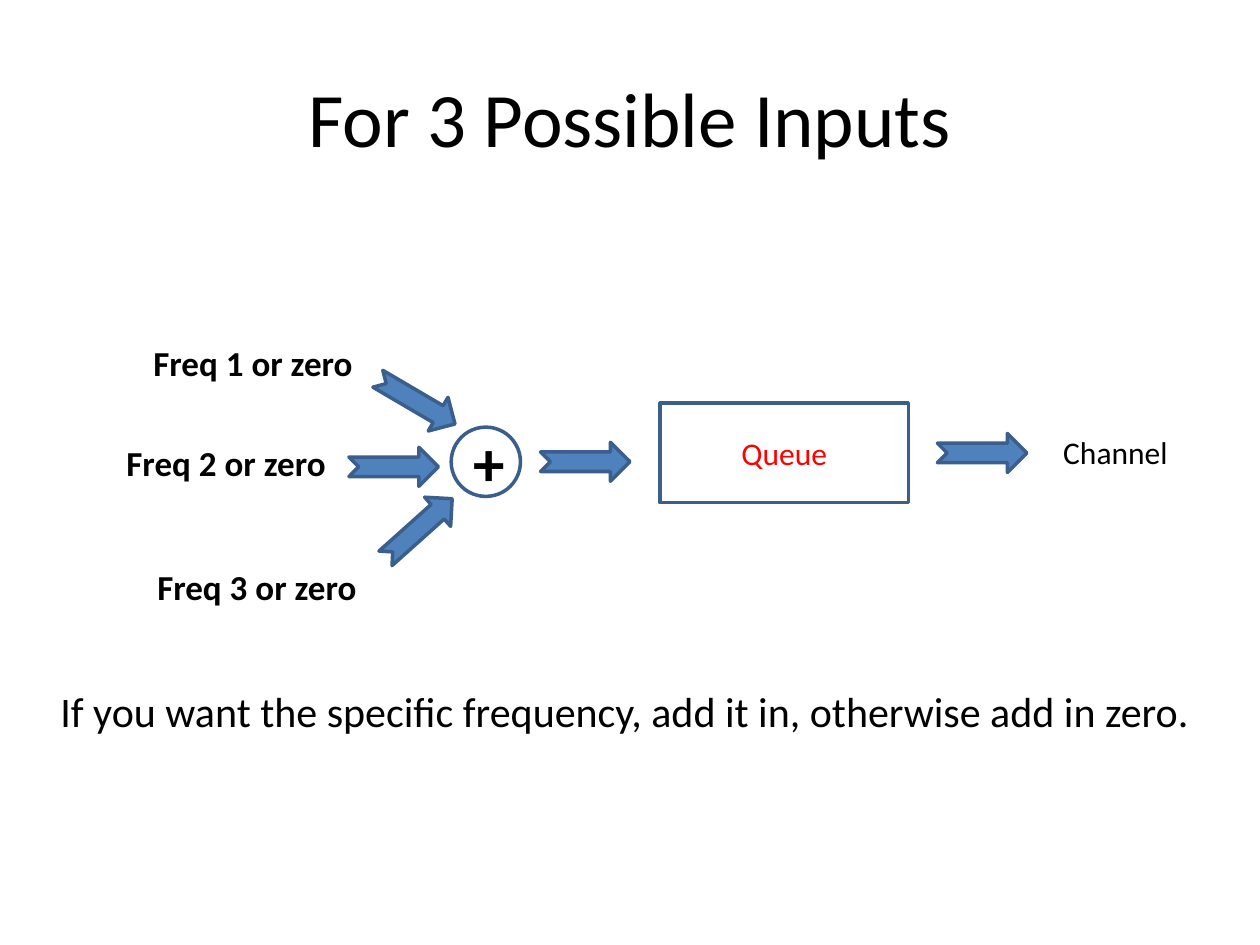
from pptx import Presentation
from pptx.dml.color import RGBColor
from pptx.enum.shapes import MSO_SHAPE as Kind
from pptx.enum.text import MSO_ANCHOR as Anchor, PP_ALIGN as Align
from pptx.util import Pt

BLACK = RGBColor(0x00, 0x00, 0x00)
RED = RGBColor(0xFF, 0x00, 0x00)
BLUE = RGBColor(0x4F, 0x81, 0xBD)
NAVY = RGBColor(0x3A, 0x5F, 0x8C)


def write(shape, text, size, color=BLACK, bold=False, center=False, wrap=False):
    frame = shape.text_frame
    frame.word_wrap = wrap
    frame.vertical_anchor = Anchor.MIDDLE if center else Anchor.TOP
    para = frame.paragraphs[0]
    para.alignment = Align.CENTER if center else Align.LEFT
    run = para.add_run()
    run.text = text
    look = {"name": "Calibri", "size": Pt(size), "bold": bold}
    for key, value in look.items():
        setattr(run.font, key, value)
    run.font.color.rgb = color


def draw(kind, x, y, w, h, fill=None):
    """Add an outlined shape, hollow unless a fill is given."""
    shape = slide.shapes.add_shape(kind, Pt(x), Pt(y), Pt(w), Pt(h))
    shape.shadow.inherit = False
    if fill is None:
        shape.fill.background()
    else:
        shape.fill.solid()
        shape.fill.fore_color.rgb = fill
    shape.line.color.rgb = NAVY
    shape.line.width = Pt(2)
    return shape


deck = Presentation()
deck.slide_width, deck.slide_height = Pt(720), Pt(540)
slide = deck.slides.add_slide(deck.slide_layouts[6])

title = slide.shapes.add_textbox(Pt(36), Pt(21.6), Pt(648), Pt(90))
write(title, "For 3 Possible Inputs", 44, center=True, wrap=True)

queue = draw(Kind.RECTANGLE, 377.3, 230.4, 141.8, 56.9)
write(queue, "Queue", 18, RED, center=True, wrap=True)

adder = draw(Kind.OVAL, 257.8, 244.1, 39.6, 39.6)
write(adder, "+", 36, bold=True, center=True, wrap=True)

# left, top, turn in degrees
arrows = [
    (212.4, 218.2, 30.4),
    (199.4, 255.6, 0),
    (213.8, 290.9, 318.2),
    (308.9, 252.7, 0),
    (535.7, 247.7, 0),
]
for x, y, turn in arrows:
    arrow = draw(Kind.NOTCHED_RIGHT_ARROW, x, y, 51.1, 22.3, BLUE)
    arrow.rotation = turn

# text, left, top, width, height, size, bold
labels = [
    ("Freq 1 or zero", 80.6, 191.5, 129.6, 31.7, 20, True),
    ("Freq 2 or zero", 65.2, 248.7, 129.6, 31.7, 20, True),
    ("Freq 3 or zero", 82.8, 319.7, 129.6, 31.7, 20, True),
    ("Channel", 600.5, 244.1, 74.9, 28.8, 18, False),
    ("If you want the specific frequency, add it in, otherwise add in zero.",
     27.4, 388.1, 666, 36, 24, False),
]
for text, x, y, w, h, size, bold in labels:
    box = slide.shapes.add_textbox(Pt(x), Pt(y), Pt(w), Pt(h))
    write(box, text, size, bold=bold)

deck.save("out.pptx")
